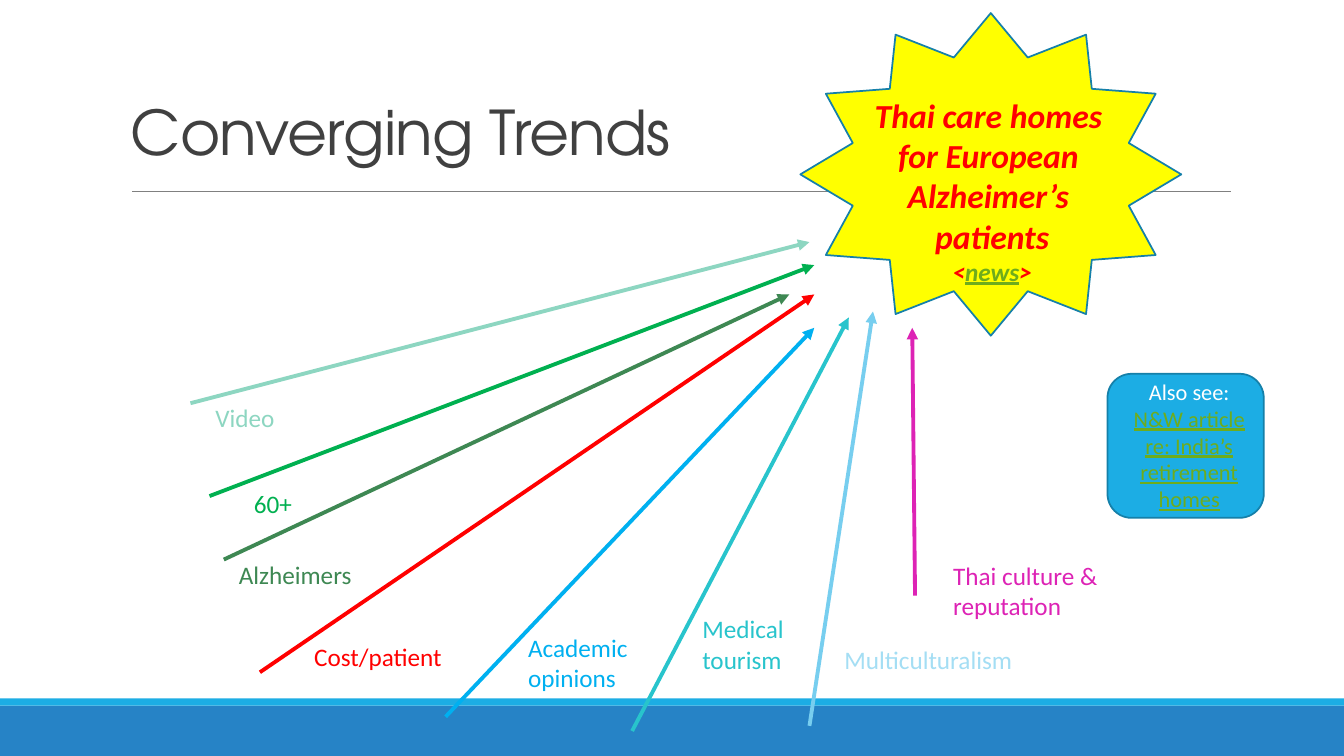
"""Build the slide on converging trends with python-pptx."""
from lxml import etree
from pptx import Presentation
from pptx.dml.color import RGBColor
from pptx.enum.shapes import MSO_CONNECTOR, MSO_SHAPE
from pptx.enum.text import MSO_ANCHOR, PP_ALIGN
from pptx.oxml.ns import qn
from pptx.util import Cm, Pt

LINE = MSO_CONNECTOR.STRAIGHT
RECT, ROUND, STAR = MSO_SHAPE.RECTANGLE, MSO_SHAPE.ROUNDED_RECTANGLE, MSO_SHAPE.STAR_12_POINT
TOP, BOTTOM = MSO_ANCHOR.TOP, MSO_ANCHOR.BOTTOM
LEFT, CENTER = PP_ALIGN.LEFT, PP_ALIGN.CENTER

WHITE = RGBColor(0xFF, 0xFF, 0xFF)
GRAY = RGBColor(0x80, 0x80, 0x80)
DARK = RGBColor(0x40, 0x40, 0x40)
BLUE = RGBColor(0x26, 0x83, 0xC6)
CYAN = RGBColor(0x1C, 0xAD, 0xE4)
EDGE = RGBColor(0x15, 0x80, 0xA9)
YELLOW = RGBColor(0xFF, 0xFF, 0x00)
RED = RGBColor(0xFF, 0x00, 0x00)
GREEN = RGBColor(0x00, 0xB0, 0x50)
MOSS = RGBColor(0x3E, 0x88, 0x53)
LIME = RGBColor(0x6E, 0xAC, 0x1C)
AZURE = RGBColor(0x00, 0xB0, 0xF0)
TEAL = RGBColor(0x28, 0xC4, 0xCC)
MINT = RGBColor(0x8D, 0xD6, 0xC1)
SKY = RGBColor(0x77, 0xCE, 0xEF)
PALE = RGBColor(0xA4, 0xDE, 0xF4)
PINK = RGBColor(0xDD, 0x23, 0xB5)

WIDE, HIGH = 33.87, 19.05

TRENDS = [
    ("Cost/patient", RED, RED, (6.55, 16.94), (20.52, 7.42), (7.67, 16.03, 4.65, 1.02)),
    ("60+", GREEN, GREEN, (5.28, 12.5), (20.52, 6.68), (6.15, 12.17, 1.7, 1.02)),
    ("Alzheimers", MOSS, MOSS, (5.64, 14.1), (19.89, 7.42), (5.77, 13.97, 4.24, 1.02)),
    ("Academic opinions", AZURE, AZURE, (11.23, 18.06), (20.52, 8.26), (13.06, 15.8, 4.65, 1.8)),
    ("Medical tourism", TEAL, TEAL, (15.93, 18.42), (21.39, 8), (17.45, 15.34, 3.33, 1.8)),
    ("Video", MINT, MINT, (4.8, 10.16), (20.4, 6.1), (5.18, 10.01, 2.74, 1.02)),
    ("Multiculturalism", SKY, PALE, (20.4, 18.29), (22, 7.85), (21.03, 16.1, 5.41, 1.02)),
    ("Thai culture & reputation", PINK, PINK, (23.06, 15.01), (22.99, 8.26), (23.77, 14, 5.41, 1.8)),
]


class Deck:
    """Hold the text style and the current slide."""

    def __init__(self):
        self.show = Presentation()
        self.show.slide_width, self.show.slide_height = Cm(WIDE), Cm(HIGH)
        self.slide = self.show.slides.add_slide(self.show.slide_layouts[6])
        self.style = {"name": "Calibri", "size": Pt(18)}

    def shape(self, kind, box, fill, edge=None):
        item = self.slide.shapes.add_shape(kind, *map(Cm, box))
        item.shadow.inherit = False
        item.fill.solid()
        item.fill.fore_color.rgb = fill
        if edge is None:
            item.line.fill.background()
        else:
            item.line.color.rgb = edge
            item.line.width = Pt(1.25)

    def line(self, start, end, color, width, arrow=False):
        item = self.slide.shapes.add_connector(LINE, *map(Cm, start + end))
        item.line.color.rgb = color
        item.line.width = Pt(width)
        props = item.element.spPr
        if arrow:
            tail = etree.SubElement(props.find(qn("a:ln")), qn("a:tailEnd"))
            tail.set("type", "triangle")
        etree.SubElement(props, qn("a:effectLst"))

    def text(self, box, lines, align=LEFT, anchor=TOP, space=1.0):
        frame = self.slide.shapes.add_textbox(*map(Cm, box)).text_frame
        frame.word_wrap = True
        frame.vertical_anchor = anchor
        for i, runs in enumerate(lines):
            para = frame.add_paragraph() if i else frame.paragraphs[0]
            para.alignment, para.line_spacing = align, space
            for words, color, form in runs:
                if words == "\n":
                    para.add_line_break()
                    continue
                run = para.add_run()
                run.text = words
                run.font.color.rgb = color
                for key, value in {**self.style, **form}.items():
                    setattr(run.font, key, value)
        return frame


def main():
    deck = Deck()
    deck.shape(RECT, (0, 17.78, WIDE, 1.27), BLUE)
    deck.shape(RECT, (0, 17.6, WIDE, 0.18), CYAN)
    deck.line((3.33, 4.83), (31.01, 4.83), GRAY, 0.5)

    head = {"name": "TeX Gyre Adventor", "size": Pt(44)}
    title = deck.text((3.05, 2.11, 16.31, 2.24), [[("Converging Trends", DARK, head)]],
                      anchor=BOTTOM, space=0.85)
    title.paragraphs[0].runs[0].font._element.set("spc", "-50")

    for name, color, ink, start, end, box in TRENDS:
        deck.line(start, end, color, 2.75, arrow=True)
        deck.text(box, [[(name, ink, {})]])

    deck.shape(STAR, (20.17, 0.33, 9.6, 8.13), YELLOW, EDGE)
    small = {"bold": True, "italic": True}
    big = {**small, "size": Pt(24)}
    lines = [[(words, RED, big)] for words in
             ("Thai care homes ", "for European ", "Alzheimer’s ", "patients")]
    lines[-1] += [("\n", RED, big), ("<", RED, small),
                  ("news", LIME, {**small, "underline": True}), (">", RED, small)]
    deck.text((21.21, 2.26, 7.59, 5.13), lines, CENTER)

    deck.shape(ROUND, (27.91, 9.42, 3.94, 3.63), CYAN, EDGE)
    note = {"size": Pt(16)}
    deck.text((28.14, 9.4, 3.66, 3.68), [[
        ("Also see: ", WHITE, note),
        ("N&W article re: India’s retirement homes", LIME, {**note, "underline": True}),
    ]], CENTER)

    deck.show.save("out.pptx")


if __name__ == "__main__":
    main()
